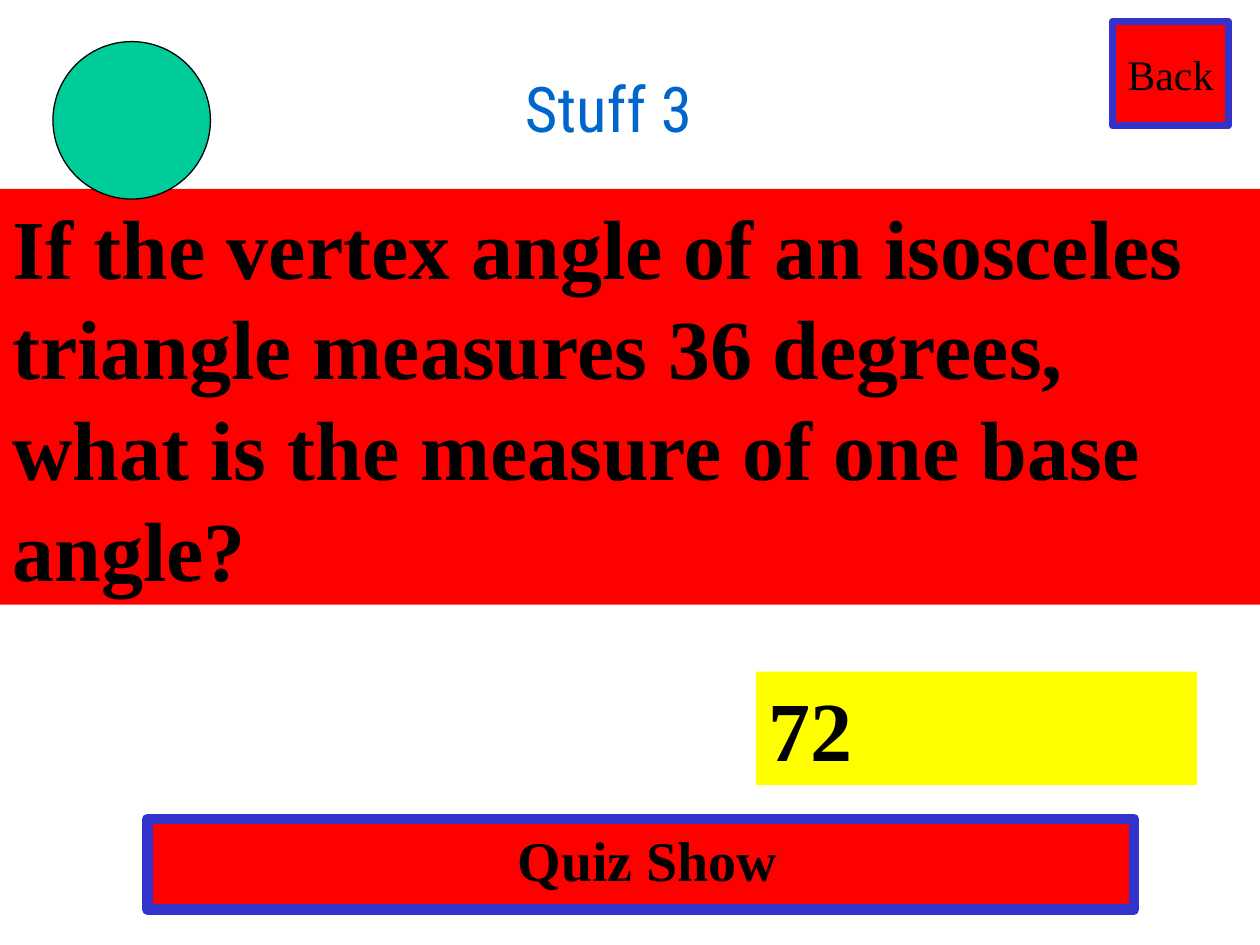
from lxml.etree import SubElement
from pptx import Presentation
from pptx.dml.color import RGBColor
from pptx.enum.shapes import MSO_SHAPE as Shape
from pptx.enum.text import MSO_ANCHOR as Anchor, MSO_AUTO_SIZE as Auto, PP_ALIGN as Align
from pptx.oxml.ns import qn
from pptx.util import Inches, Pt

RED = RGBColor(0xFF, 0x00, 0x00)
YELLOW = RGBColor(0xFF, 0xFF, 0x00)
GREEN = RGBColor(0x00, 0xCC, 0x99)
INDIGO = RGBColor(0x33, 0x33, 0xCC)
BLUE = RGBColor(0x00, 0x66, 0xCC)
SKY = RGBColor(0x99, 0xCC, 0xFF)
BLACK = RGBColor(0x00, 0x00, 0x00)
SERIF, SANS = "Times New Roman", "Roboto Condensed"

# Content: box (left, top, width, height), fill, border and text
TITLE = ("Stuff 3", (2.33, 0.5, 5, 0.62))
QUESTION = ("If the vertex angle of an isosceles triangle measures 36 degrees, "
            "what is the measure of one base angle?")
BANNER = dict(box=(1.17, 6.5, 7.83, 0.72), fill=RED, line=(INDIGO, 6),
              text=" Quiz Show", size=32, bold=True, align=Align.CENTER)
PANELS = [
    dict(box=(8.83, 0.17, 0.92, 0.83), fill=RED, line=(INDIGO, 4), text="Back",
         size=24, align=Align.CENTER, anchor=Anchor.MIDDLE, wrap=False),
    dict(box=(0, 1.5, 10, 3.3), fill=RED, text=QUESTION, size=48, bold=True),
    dict(box=(6, 5.33, 3.5, 0.9), fill=YELLOW, text="72", size=48, bold=True),
    dict(box=(0.42, 0.33, 1.25, 1.25), fill=GREEN, line=(BLACK, 0.75),
         kind=Shape.OVAL),
]


def write(shape, text, size, font=SERIF, color=BLACK, bold=False,
          align=Align.LEFT, anchor=Anchor.TOP, wrap=True):
    frame = shape.text_frame
    frame.word_wrap = wrap
    frame.vertical_anchor = anchor
    frame.auto_size = Auto.SHAPE_TO_FIT_TEXT if wrap else Auto.NONE
    para = frame.paragraphs[0]
    para.alignment = align
    run = para.add_run()
    run.text = text
    run.font.name, run.font.size, run.font.bold = font, Pt(size), bold
    run.font.color.rgb = color
    return run


def add_panel(slide, box, fill, line=None, kind=Shape.RECTANGLE, text=None, **style):
    shape = slide.shapes.add_shape(kind, *map(Inches, box))
    shape.shadow.inherit = False
    shape.fill.solid()
    shape.fill.fore_color.rgb = fill
    if line:
        shape.line.color.rgb, shape.line.width = line[0], Pt(line[1])
    else:
        shape.line.fill.background()
    if text:
        write(shape, text, **style)


def outline(run, color, width):
    props = run.font._element
    edge = SubElement(props, qn("a:ln"), w=str(Pt(width)))
    fill = SubElement(edge, qn("a:solidFill"))
    SubElement(fill, qn("a:srgbClr"), val=str(color))
    props.insert(0, edge)


def main():
    deck = Presentation()
    deck.slide_width, deck.slide_height = Inches(10), Inches(7.5)
    slide = deck.slides.add_slide(deck.slide_layouts[6])

    # Bottom banner
    add_panel(slide, **BANNER)

    # Title with outlined letters
    text, box = TITLE
    title = slide.shapes.add_textbox(*map(Inches, box))
    run = write(title, text, 36, SANS, BLUE, align=Align.CENTER, wrap=False)
    outline(run, SKY, 1.5)

    # Back button, question, answer and disc
    for panel in PANELS:
        add_panel(slide, **panel)

    deck.save("out.pptx")


if __name__ == "__main__":
    main()
